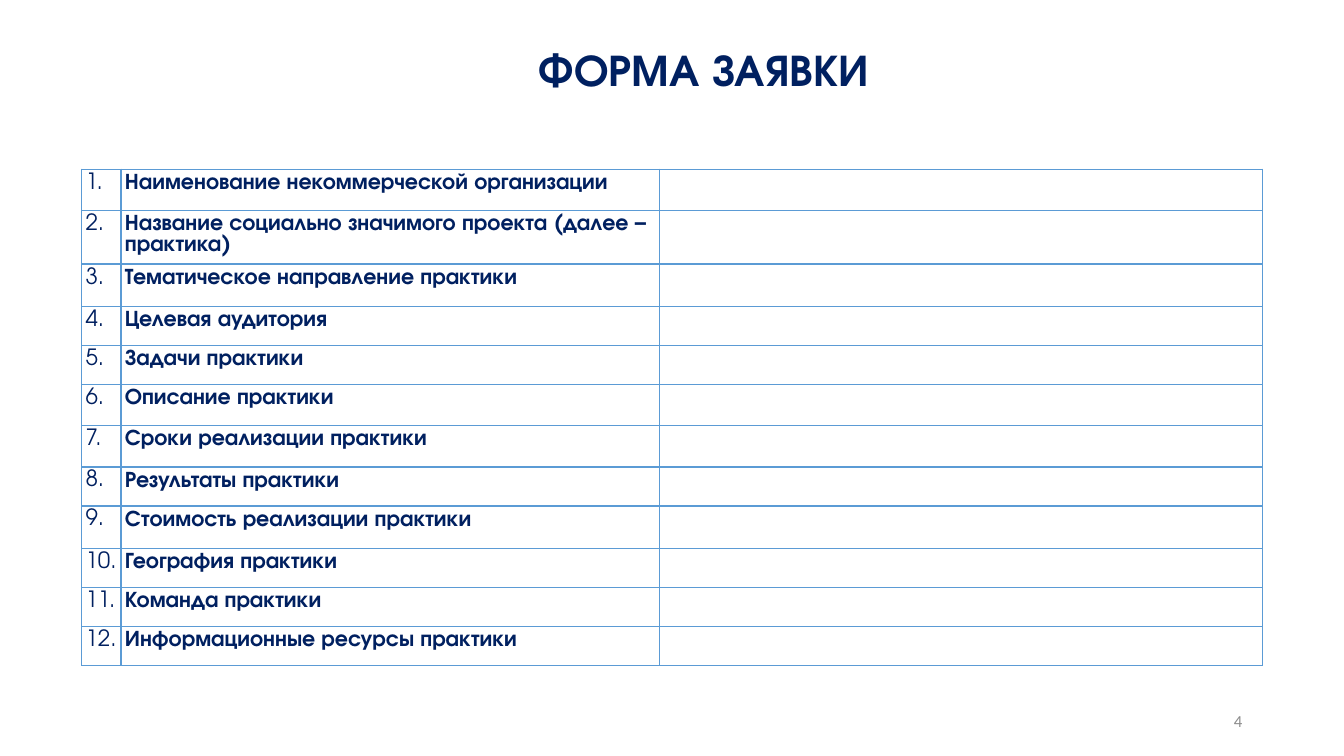
"""Builds the application form slide: a title, a numbered table and a page number."""
from lxml.etree import SubElement
from pptx import Presentation
from pptx.dml.color import RGBColor
from pptx.enum.text import MSO_ANCHOR as Anchor, PP_ALIGN as Align
from pptx.oxml.ns import qn
from pptx.util import Inches, Pt

COLORS = {"navy": "002060", "border": "5B9BD5", "number": "8C8C8C"}
HEADING_FONT = "TeX Gyre Adventor"
FIELDS = [
    ("Наименование некоммерческой организации", 0.41),
    ("Название социально значимого проекта (далее – практика)", 0.53),
    ("Тематическое направление практики", 0.42),
    ("Целевая аудитория", 0.33),
    ("Задачи практики", 0.33),
    ("Описание практики", 0.41),
    ("Сроки реализации практики", 0.41),
    ("Результаты практики", 0.33),
    ("Стоимость реализации практики", 0.42),
    ("География практики", 0.33),
    ("Команда практики", 0.33),
    ("Информационные ресурсы практики", 0.33),
]
COLUMNS = [0.39, 5.34, 5.98]


def style(para, name, size, color, bold=False):
    para.font.name = name
    para.font.size = Pt(size)
    para.font.bold = bold
    para.font.color.rgb = RGBColor.from_string(COLORS[color])


def add_label(page, place, text, anchor, align):
    box = page.shapes.add_textbox(*map(Inches, place))
    box.text_frame.word_wrap = True
    box.text_frame.vertical_anchor = anchor
    para = box.text_frame.paragraphs[0]
    para.text = text
    para.alignment = align
    return para


deck = Presentation()
deck.slide_width, deck.slide_height = Inches(13.33), Inches(7.5)
page = deck.slides.add_slide(deck.slide_layouts[6])

number = add_label(page, (9.42, 6.95, 3, 0.4), "4", Anchor.MIDDLE, Align.RIGHT)
style(number, "Calibri", 12, "number")

title = add_label(page, (3.05, 0.35, 7.87, 0.65), "ФОРМА ЗАЯВКИ", Anchor.BOTTOM, Align.CENTER)
title.line_spacing = 0.9
style(title, HEADING_FONT, 32, "navy", bold=True)

height = sum(row_height for _, row_height in FIELDS)
table = page.shapes.add_table(
    len(FIELDS), len(COLUMNS), Inches(0.81), Inches(1.68), Inches(sum(COLUMNS)), Inches(height)
).table
table.first_row = table.horz_banding = False
for column, width in zip(table.columns, COLUMNS):
    column.width = Inches(width)

for index, (field, row_height) in enumerate(FIELDS):
    table.rows[index].height = Inches(row_height)
    for position, text in enumerate((f"{index + 1}.", field, "")):
        cell = table.cell(index, position)
        cell.margin_left = cell.margin_right = cell.margin_top = Inches(0.04)
        cell.margin_bottom = Inches(0.08)
        para = cell.text_frame.paragraphs[0]
        para.text = text
        para.line_spacing = Pt(14.5)
        style(para, HEADING_FONT, 16, "navy", bold=position == 1)
        properties = cell._tc.get_or_add_tcPr()
        for side in ("lnL", "lnR", "lnT", "lnB"):
            line = SubElement(properties, qn(f"a:{side}"), w=str(Pt(1)))
            fill = SubElement(line, qn("a:solidFill"))
            SubElement(fill, qn("a:srgbClr"), val=COLORS["border"])
        cell.fill.background()

deck.save("out.pptx")
